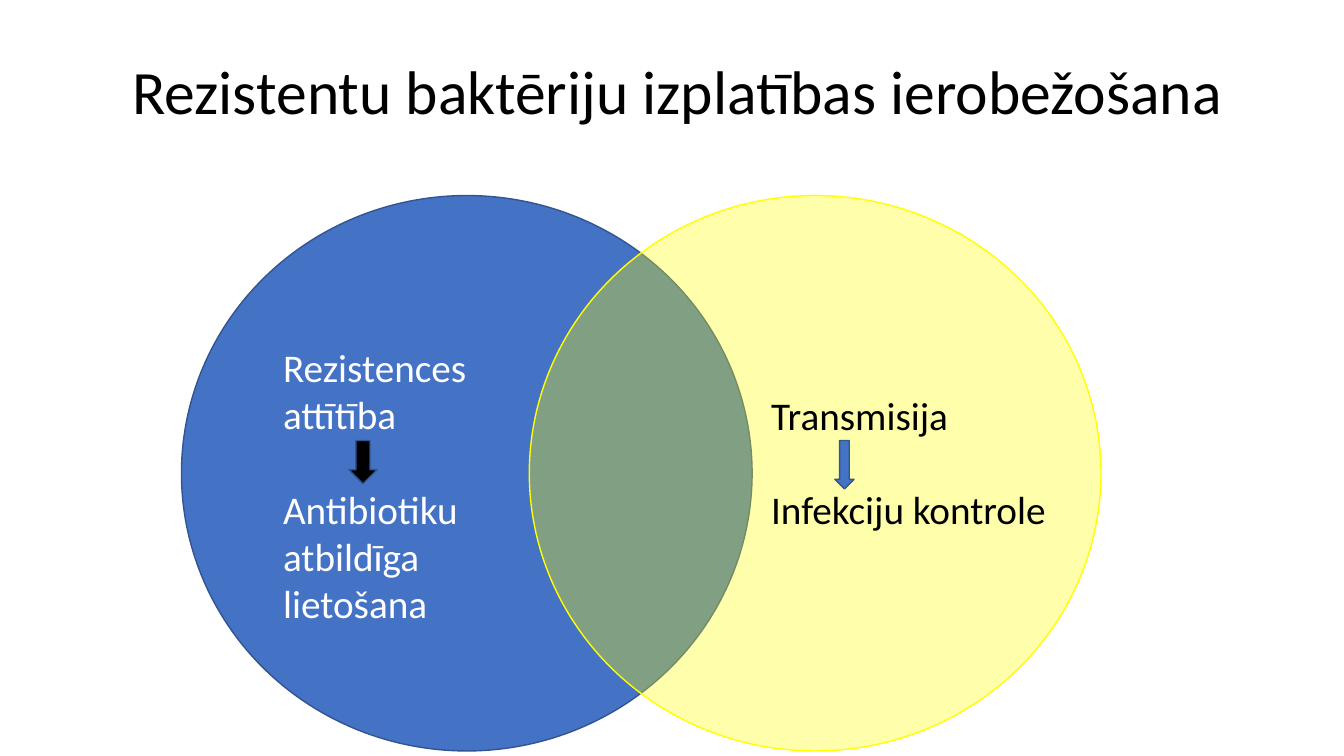
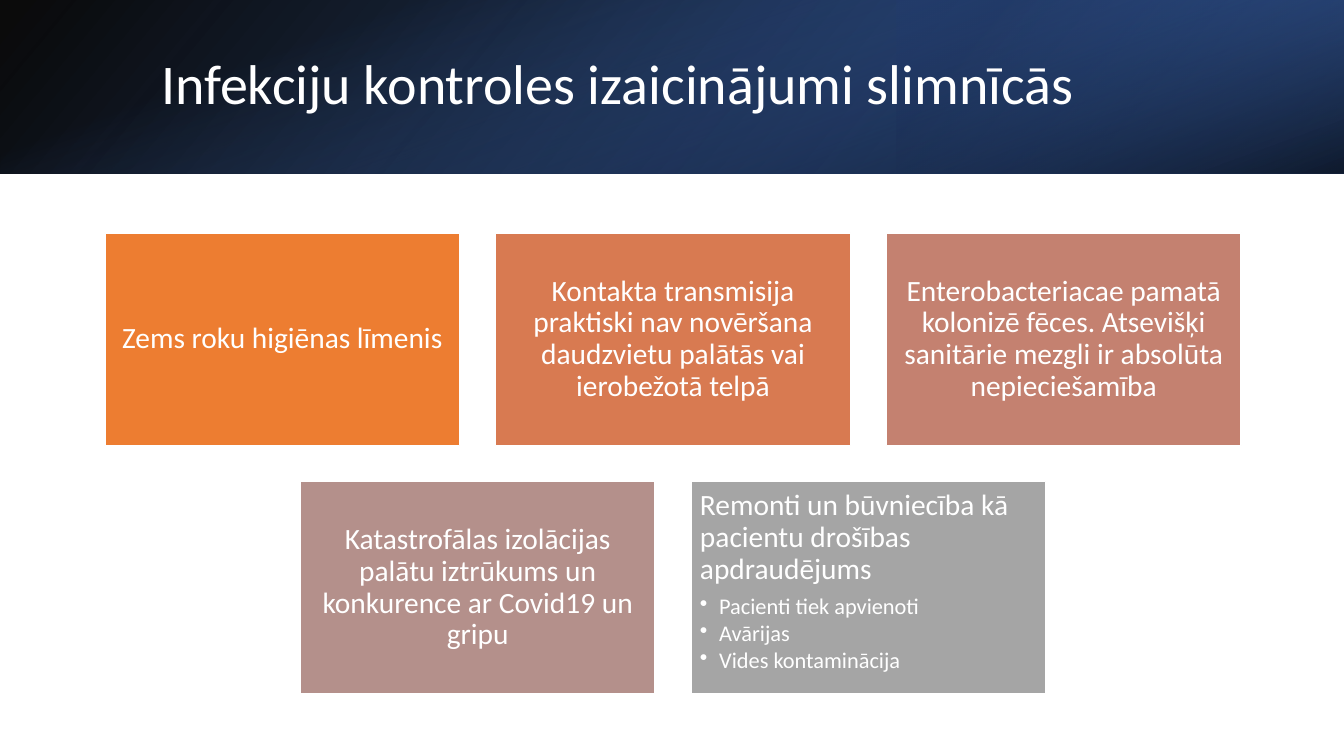
from lxml.etree import SubElement
from pptx import Presentation
from pptx.dml.color import RGBColor
from pptx.enum.shapes import MSO_SHAPE
from pptx.enum.text import MSO_ANCHOR, MSO_AUTO_SIZE, PP_ALIGN
from pptx.oxml.ns import qn
from pptx.util import Inches, Pt

FONT = "Calibri"
WHITE, BLACK, BLUE, DARK_BLUE, YELLOW = "FFFFFF", "000000", "4472C4", "325491", "FFFF00"
SLIDE_W, SLIDE_H = 13.33, 7.5
BAND_H = 1.72

SPREAD_TITLE = "Rezistentu baktēriju izplatības ierobežošana"
CIRCLES = [
    ((1.8, 1.94, 5.66, 5.51), BLUE, DARK_BLUE, 100),
    ((5.25, 1.94, 5.67, 5.51), YELLOW, YELLOW, 33),
]
CAUSES = [
    ((2.71, 3.36, 2.86, 2.93), WHITE, ["Rezistences attītība", "Antibiotiku atbildīga lietošana"]),
    ((7.55, 3.83, 3.57, 1.51), BLACK, ["Transmisija", "Infekciju kontrole"]),
]
ARROWS = [((3.46, 4.37, 0.28, 0.43), BLACK), ((8.28, 4.37, 0.19, 0.48), BLUE)]

CHALLENGES_TITLE = "Infekciju kontroles izaicinājumi slimnīcās"
BANDS = [
    ((0, 0, SLIDE_W, BAND_H), 0, True, 140, [(0, BLACK, 96), (100, "2F5597", 100)]),
    ((8.89, 0, 4.44, BAND_H), 180, True, 320, [(19, "203864", 68), (100, BLUE, 79)]),
    (((SLIDE_W - BAND_H) / 2, (BAND_H - SLIDE_W) / 2, BAND_H, SLIDE_W), 90, False, 340,
     [(23, BLUE, 0), (99, BLACK, 74)]),
]
CHALLENGE_ROWS = [
    [
        ("ED7D31", "Zems roku higiēnas līmenis", []),
        ("D87A51", "Kontakta transmisija praktiski nav novēršana daudzvietu palātās "
                   "vai ierobežotā telpā", []),
        ("C48170", "Enterobacteriacae pamatā kolonizē fēces. Atsevišķi sanitārie mezgli "
                   "ir absolūta nepieciešamība", []),
    ],
    [
        ("B4908B", "Katastrofālas izolācijas palātu iztrūkums un konkurence ar Covid19 un gripu", []),
        ("A5A5A5", "Remonti un būvniecība kā pacientu drošības apdraudējums",
         ["Pacienti tiek apvienoti", "Avārijas", "Vides kontaminācija"]),
    ],
]
GRID_LEFT, GRID_TOP, GRID_W = 1.04, 2.31, 11.27
CARD_W, CARD_H = 3.52, 2.11
CARD_GAP = (GRID_W - 3 * CARD_W) / 2


def rgb(color):
    return RGBColor.from_string(color)


def inches(box):
    return [Inches(length) for length in box]


def set_alpha(color_element, opacity):
    SubElement(color_element, qn("a:alpha")).set("val", str(opacity * 1000))


def write(frame, text, size, color, first=False, align=PP_ALIGN.LEFT, spacing=1.0,
          before=0, after=0, bullet=False):
    paragraph = frame.paragraphs[0] if first else frame.add_paragraph()
    paragraph.alignment = align
    paragraph.line_spacing = spacing
    paragraph.space_before, paragraph.space_after = Pt(before), Pt(after)
    if bullet:
        paragraph.level = 1
        properties = paragraph._p.get_or_add_pPr()
        properties.set("marL", str(Inches(0.19)))
        properties.set("indent", str(Inches(-0.19)))
        SubElement(properties, qn("a:buChar")).set("char", "•")
    run = paragraph.add_run()
    run.text = text
    run.font.name, run.font.size = FONT, Pt(size)
    run.font.color.rgb = rgb(color)


def add_figure(slide, kind, box, fill, line=None, opacity=100):
    figure = slide.shapes.add_shape(kind, *inches(box))
    figure.shadow.inherit = False
    figure.fill.solid()
    figure.fill.fore_color.rgb = rgb(fill)
    if opacity < 100:
        set_alpha(figure._element.spPr.find(f"{qn('a:solidFill')}/{qn('a:srgbClr')}"), opacity)
    if line:
        figure.line.color.rgb = rgb(line)
        figure.line.width = Pt(1)
    else:
        figure.line.fill.background()
    return figure


def add_band(slide, box, rotation, flipped, angle, stops):
    band = add_figure(slide, MSO_SHAPE.RECTANGLE, box, BLACK)
    band.rotation = rotation
    properties = band._element.spPr
    if flipped:
        properties.find(qn("a:xfrm")).set("flipH", "1")
    band.fill.gradient()
    gradient = properties.find(qn("a:gradFill"))
    for child in list(gradient):
        gradient.remove(child)
    gradient.set("rotWithShape", "1")
    stop_list = SubElement(gradient, qn("a:gsLst"))
    for position, color, opacity in stops:
        stop = SubElement(stop_list, qn("a:gs"))
        stop.set("pos", str(position * 1000))
        stop_color = SubElement(stop, qn("a:srgbClr"))
        stop_color.set("val", color)
        set_alpha(stop_color, opacity)
    direction = SubElement(gradient, qn("a:lin"))
    direction.set("ang", str(angle * 60000))
    direction.set("scaled", "0")


def add_titled_slide(deck, title, box, size, color, bands=()):
    slide = deck.slides.add_slide(deck.slide_layouts[5])
    for band in bands:
        add_band(slide, *band)
    heading = slide.shapes.title
    slide.shapes._spTree.append(heading._element)
    heading.left, heading.top, heading.width, heading.height = inches(box)
    frame = heading.text_frame
    frame.word_wrap = True
    frame.auto_size = MSO_AUTO_SIZE.NONE
    frame.vertical_anchor = MSO_ANCHOR.MIDDLE
    write(frame, title, size, color, first=True, spacing=0.9)
    return slide


def build_spread(deck):
    slide = add_titled_slide(deck, SPREAD_TITLE, (1.21, 0.21, 11.5, 1.45), 44, BLACK)
    for box, fill, line, opacity in CIRCLES:
        add_figure(slide, MSO_SHAPE.OVAL, box, fill, line, opacity)
    for box, color, (cause, remedy) in CAUSES:
        frame = slide.shapes.add_textbox(*inches(box)).text_frame
        frame.word_wrap = True
        write(frame, cause, 28, color, first=True)
        write(frame, remedy, 28, color, before=34)
    for box, fill in ARROWS:
        add_figure(slide, MSO_SHAPE.DOWN_ARROW, box, fill, DARK_BLUE)


def add_card(slide, box, fill, challenge, details):
    card = add_figure(slide, MSO_SHAPE.RECTANGLE, box, fill, WHITE)
    frame = card.text_frame
    frame.word_wrap = True
    frame.margin_left = frame.margin_right = frame.margin_top = frame.margin_bottom = Inches(0.09)
    frame.vertical_anchor = MSO_ANCHOR.TOP if details else MSO_ANCHOR.MIDDLE
    align = PP_ALIGN.LEFT if details else PP_ALIGN.CENTER
    write(frame, challenge, 21, WHITE, first=True, align=align, spacing=0.9,
          after=7 if details else 0)
    for detail in details:
        write(frame, detail, 16, WHITE, spacing=0.9, after=2, bullet=True)


def build_challenges(deck):
    slide = add_titled_slide(deck, CHALLENGES_TITLE, (1.5, 0.38, 10.98, 0.96), 40, WHITE, BANDS)
    for row, cards in enumerate(CHALLENGE_ROWS):
        row_w = len(cards) * (CARD_W + CARD_GAP) - CARD_GAP
        row_left = GRID_LEFT + (GRID_W - row_w) / 2
        top = GRID_TOP + row * (CARD_H + CARD_GAP)
        for column, card in enumerate(cards):
            left = row_left + column * (CARD_W + CARD_GAP)
            add_card(slide, (left, top, CARD_W, CARD_H), *card)


def main():
    deck = Presentation()
    deck.slide_width, deck.slide_height = Inches(SLIDE_W), Inches(SLIDE_H)
    build_spread(deck)
    build_challenges(deck)
    deck.save("out.pptx")


if __name__ == "__main__":
    main()
